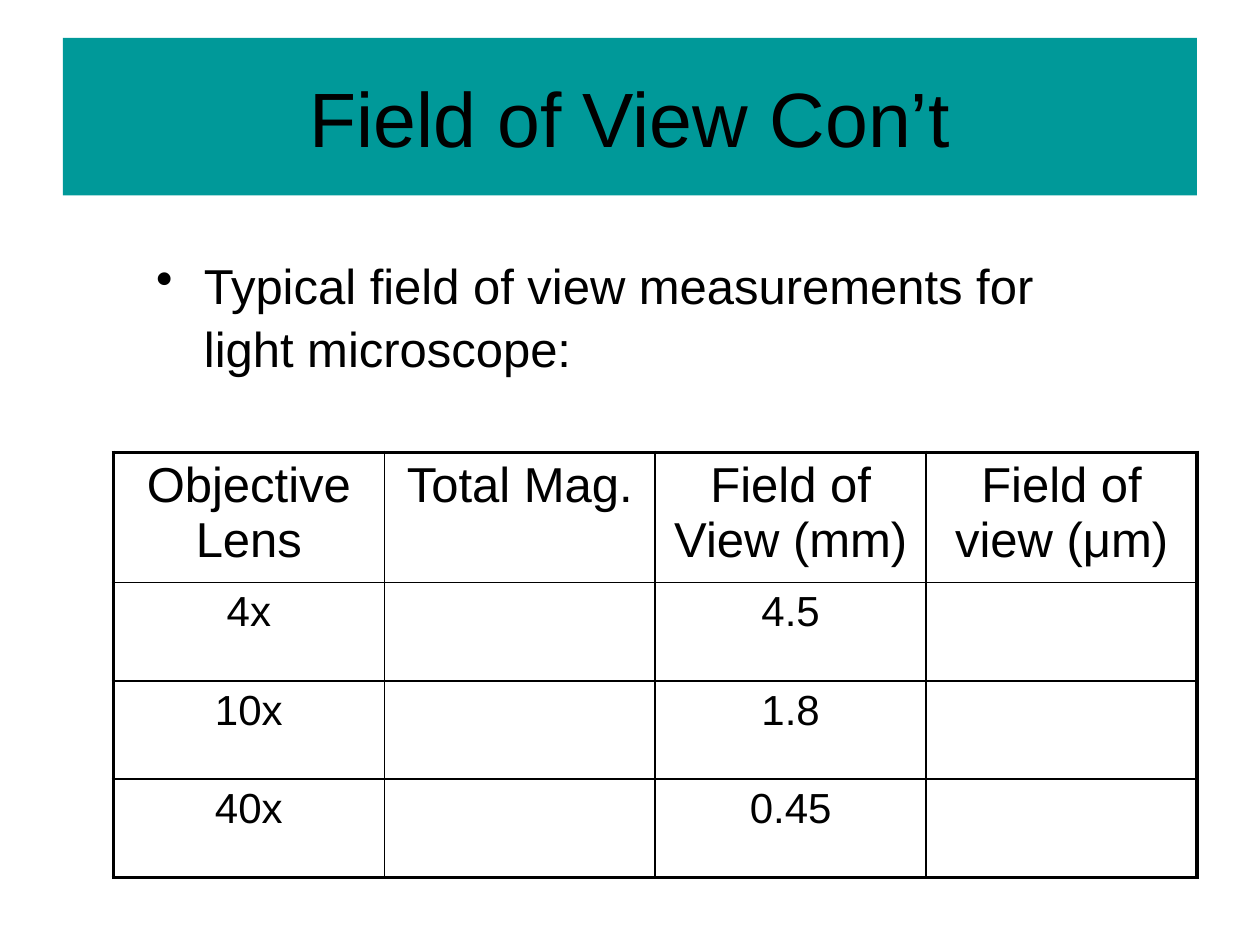
"""Build a slide with a title band, a bullet and a table of lens values."""
import pptx
import pptx.dml.color
import pptx.enum.shapes
import pptx.enum.text
import pptx.oxml
import pptx.oxml.ns
import pptx.util

Inches = pptx.util.Inches
Pt = pptx.util.Pt
ALIGN = pptx.enum.text.PP_ALIGN
ANCHOR = pptx.enum.text.MSO_ANCHOR
THIN, THICK = 1, 2.25
ROWS = [
    ["Objective Lens", "Total Mag.", "Field of View (mm)", "Field of view (μm)"],
    ["4x", "", "4.5", ""],
    ["10x", "", "1.8", ""],
    ["40x", "", "0.45", ""],
]


def color(code):
    return pptx.dml.color.RGBColor.from_string(code)


def put_text(frame, text, font="Arial", size=28, ink="000000", align=ALIGN.CENTER,
             anchor=ANCHOR.TOP, lines=None):
    frame.word_wrap = True
    frame.vertical_anchor = anchor
    para = frame.paragraphs[0]
    para.alignment = align
    if lines:
        para.line_spacing = lines
    run = para.add_run()
    run.text = text
    run.font.name = font
    run.font.size = Pt(size)
    run.font.color.rgb = color(ink)
    return para


def add_line(props, side, width, ink):
    props.append(pptx.oxml.parse_xml(
        f'<a:ln{side} {pptx.oxml.ns.nsdecls("a")} w="{Pt(width)}">'
        f'<a:solidFill><a:srgbClr val="{ink}"/></a:solidFill></a:ln{side}>'))


class Deck:
    def __init__(self, font="Arial", ink="000000", band="009999"):
        self.font, self.ink, self.band = font, ink, band
        self.show = pptx.Presentation()
        self.show.slide_width, self.show.slide_height = Inches(10), Inches(7.5)
        self.slide = self.show.slides.add_slide(self.show.slide_layouts[6])

    def label(self, frame, text, **form):
        return put_text(frame, text, font=self.font, ink=self.ink, **form)

    def title(self, text, box):
        kind = pptx.enum.shapes.MSO_SHAPE.RECTANGLE
        shape = self.slide.shapes.add_shape(kind, *map(Inches, box))
        shape.shadow.inherit = False
        shape.fill.solid()
        shape.fill.fore_color.rgb = color(self.band)
        shape.line.fill.background()
        self.label(shape.text_frame, text, size=44, anchor=ANCHOR.MIDDLE)

    def bullet(self, text, box, indent=0.38):
        shape = self.slide.shapes.add_textbox(*map(Inches, box))
        para = self.label(shape.text_frame, text, align=ALIGN.LEFT, lines=1.08)
        props = para._p.get_or_add_pPr()
        props.set("marL", str(Inches(indent)))
        props.set("indent", str(-Inches(indent)))
        props.append(pptx.oxml.parse_xml(
            f'<a:buChar {pptx.oxml.ns.nsdecls("a")} char="•"/>'))

    def table(self, rows, left, top, wide, high):
        count, span = len(rows), len(rows[0])
        grid = self.slide.shapes.add_table(
            count, span, Inches(left), Inches(top),
            Inches(wide * span), Inches(high * count)).table
        for r, row in enumerate(rows):
            for c, text in enumerate(row):
                cell = grid.cell(r, c)
                edges = {"L": c == 0, "R": c == span - 1,
                         "T": r == 0, "B": r == count - 1}
                props = cell._tc.get_or_add_tcPr()
                for side, outer in edges.items():
                    add_line(props, side, THICK if outer else THIN, self.ink)
                cell.fill.background()
                if text:
                    self.label(cell.text_frame, text, size=24 if r else 28)


def main():
    deck = Deck()
    deck.title("Field of View Con’t", (0.5, 0.3, 9, 1.25))
    deck.bullet("Typical field of view measurements for light microscope:",
                (1.14, 1.94, 7.97, 1.13))
    deck.table(ROWS, 0.9, 3.59, 2.15, 0.78)
    deck.show.save("out.pptx")


if __name__ == "__main__":
    main()
